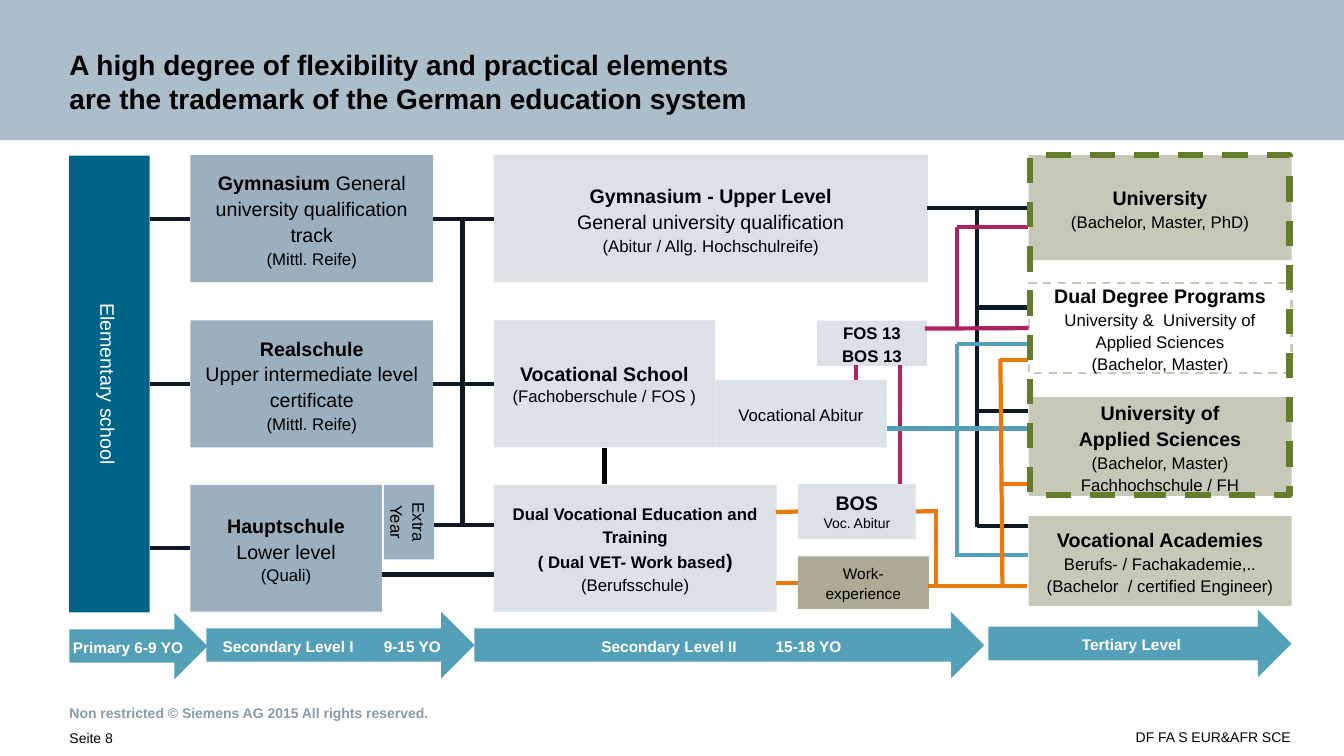
from dataclasses import dataclass
from typing import NamedTuple

import pptx
import pptx.dml.color
import pptx.enum.dml
import pptx.enum.shapes
import pptx.enum.text
import pptx.oxml
import pptx.oxml.ns
import pptx.util
from pptx.util import Inches

SHAPE = pptx.enum.shapes.MSO_SHAPE
ALIGN = pptx.enum.text.PP_ALIGN
ANCHOR = pptx.enum.text.MSO_ANCHOR
DASH = pptx.enum.dml.MSO_LINE.DASH

NAVY, TEAL, SKY = "0F1923", "006487", "55A0B9"
STEEL, PALE, SAND, OLIVE = "9BAFBE", "DCE1E6", "C8C8B9", "AAAA96"
BERRY, ORANGE, GREEN = "AF235F", "EB780A", "647D2D"
BLACK, WHITE = "000000", "FFFFFF"
LEFT, BOTTOM, RIGHT = 1, 2, 3


class Run(NamedTuple):
    text: str
    size: float = 12
    bold: bool = False


Paragraphs = list[list[Run]]


@dataclass
class Box:
    at: tuple[float, float, float, float]
    paragraphs: Paragraphs
    fill: str | None = None
    color: str = BLACK
    rotation: float = 0
    spacing: float = 1.1
    outline: tuple[str, float] | None = None
    preset: SHAPE = SHAPE.RECTANGLE
    align: ALIGN = ALIGN.CENTER
    insets: tuple[float, float, float, float] = (0.12, 0.06, 0.12, 0.06)
    tab: float = 0


class Link(NamedTuple):
    start: tuple[float, float]
    end: tuple[float, float]
    color: str = NAVY
    begin_at: tuple[str, int] | None = None
    end_at: tuple[str, int] | None = None


def rgb(value: str) -> pptx.dml.color.RGBColor:
    return pptx.dml.color.RGBColor.from_string(value)


def write(frame, paragraphs: Paragraphs, color: str, align: ALIGN, anchor: ANCHOR,
          insets: tuple[float, float, float, float], spacing: float = 1, tab: float = 0) -> None:
    """Fill a text frame; a newline in a run becomes a line break."""
    frame.word_wrap = True
    frame.vertical_anchor = anchor
    frame.margin_left, frame.margin_top, frame.margin_right, frame.margin_bottom = map(Inches, insets)
    for index, runs in enumerate(paragraphs):
        paragraph = frame.add_paragraph() if index else frame.paragraphs[0]
        paragraph.alignment = align
        paragraph.line_spacing = spacing
        if tab:
            tabs = pptx.oxml.parse_xml(
                f'<a:tabLst {pptx.oxml.ns.nsdecls("a")}><a:tab pos="{Inches(tab)}" algn="l"/></a:tabLst>')
            paragraph._p.get_or_add_pPr().append(tabs)
        for text, size, bold in runs:
            for number, line in enumerate(text.split("\n")):
                if number:
                    paragraph.add_line_break()
                run = paragraph.add_run()
                run.text = line
                run.font.name = "Arial"
                run.font.size = pptx.util.Pt(size)
                run.font.bold = bold
                run.font.color.rgb = rgb(color)


def draw_box(slide, box: Box):
    shape = slide.shapes.add_shape(box.preset, *map(Inches, box.at))
    shape.shadow.inherit = False
    shape.rotation = box.rotation
    if box.fill:
        shape.fill.solid()
        shape.fill.fore_color.rgb = rgb(box.fill)
    else:
        shape.fill.background()
    if box.outline:
        color, width = box.outline
        shape.line.color.rgb = rgb(color)
        shape.line.width = pptx.util.Pt(width)
        shape.line.dash_style = DASH
    else:
        shape.line.fill.background()
    write(shape.text_frame, box.paragraphs, box.color, box.align, ANCHOR.MIDDLE,
          box.insets, box.spacing, box.tab)
    return shape


def draw_link(slide, link: Link, shapes: dict) -> None:
    line = slide.shapes.add_connector(pptx.enum.shapes.MSO_CONNECTOR.STRAIGHT,
                                      *map(Inches, link.start + link.end))
    if link.begin_at:
        line.begin_connect(shapes[link.begin_at[0]], link.begin_at[1])
    if link.end_at:
        line.end_connect(shapes[link.end_at[0]], link.end_at[1])
    line.line.color.rgb = rgb(link.color)
    line.line.width = pptx.util.Pt(3)
    line._element.spPr.append(pptx.oxml.parse_xml(f'<a:effectLst {pptx.oxml.ns.nsdecls("a")}/>'))


def draw_label(slide, at: tuple[float, float, float, float], run: Run, insets, color: str = BLACK,
               align: ALIGN = ALIGN.LEFT, anchor: ANCHOR = ANCHOR.TOP, spacing: float = 1) -> None:
    label = slide.shapes.add_textbox(*map(Inches, at))
    write(label.text_frame, [[run]], color, align, anchor, insets, spacing)


def school(at, name: str, *details: Run, fill: str = PALE, **options) -> Box:
    """A box with a bold 14 pt name and one paragraph for each detail."""
    return Box(at, [[Run(name, 14, True)]] + [[detail] for detail in details], fill, **options)


def level(at, text: str, **options) -> Box:
    return Box(at, [[Run(text, 11, True)]], SKY, WHITE, preset=SHAPE.RIGHT_ARROW, **options)


BOXES = {
    "elementary": Box((-1.18, 3.41, 4.53, 0.8), [[Run("Elementary school", 14)]], TEAL, WHITE, 90),
    "gymnasium": Box((1.89, 1.54, 2.41, 1.26), [
        [Run("Gymnasium ", 14, True), Run("General university qualification track", 14)],
        [Run("(Mittl. Reife)")]], STEEL),
    "realschule": school((1.89, 3.18, 2.41, 1.26), "Realschule",
                         Run("Upper intermediate level certificate", 14), Run("(Mittl. Reife)"), fill=STEEL),
    "hauptschule": school((1.89, 4.81, 1.9, 1.26), "Hauptschule",
                          Run("Lower level", 14), Run("(Quali)"), fill=STEEL),
    "extra year": Box((3.69, 4.93, 0.74, 0.5), [[Run("Extra Year")]], STEEL, rotation=90),
    "upper level": school((4.9, 1.54, 4.31, 1.26), "Gymnasium - Upper Level",
                          Run("General university qualification", 14),
                          Run("(Abitur / Allg. Hochschulreife)")),
    "vocational school": school((4.9, 3.18, 2.2, 1.26), "Vocational School",
                                Run("(Fachoberschule / FOS )"), spacing=1),
    "vocational abitur": Box((7.1, 3.77, 1.7, 0.67), [[Run("Vocational Abitur")]], PALE),
    "dual training": Box((4.9, 4.81, 2.81, 1.26), [
        [Run("Dual Vocational Education and Training", 12, True)],
        [Run("( Dual VET- Work based", 12, True), Run(")", 14, True)],
        [Run("(Berufsschule)")]], PALE),
    "fos bos 13": Box((8.11, 3.18, 1.09, 0.45), [[Run("FOS 13 BOS 13", 12, True)]], PALE),
    "bos": school((7.92, 4.8, 1.17, 0.55), "BOS", Run("Voc. Abitur", 10), spacing=1),
    "work": Box((7.92, 5.52, 1.3, 0.52), [[Run("Work- experience", 11)]], OLIVE),
    "university": school((10.21, 1.54, 2.61, 1.04), "University",
                         Run("(Bachelor, Master, PhD)"), fill=SAND),
    "dual degree": school((10.21, 2.81, 2.61, 0.89), "Dual Degree Programs",
                          Run("University &  University of Applied Sciences\n(Bachelor, Master)"),
                          fill=None, outline=(SAND, 1.5)),
    "applied sciences": school((10.21, 3.94, 2.61, 0.98), "University of",
                               Run("Applied Sciences", 14, True),
                               Run("(Bachelor, Master) Fachhochschule / FH"), fill=SAND),
    "academies": school((10.21, 5.12, 2.61, 0.89), "Vocational Academies",
                        Run("Berufs- / Fachakademie,..\n(Bachelor  / certified Engineer)"), fill=SAND),
    "primary": level((0.69, 6.08, 1.37, 0.66), "Primary 6-9 YO ", insets=(0, 0.06, 0, 0.06)),
    "secondary 1": level((2.05, 6.07, 2.66, 0.66), "Secondary Level I\t9-15 YO",
                         align=ALIGN.LEFT, insets=(0.16, 0.06, 0, 0.06), tab=1.6),
    "secondary 2": level((4.71, 6.07, 5.06, 0.66), "Secondary Level II\t15-18 YO",
                         align=ALIGN.LEFT, insets=(1.26, 0.06, 0, 0.06), tab=1.73),
    "tertiary": level((9.81, 6.05, 3.01, 0.67), "Tertiary Level"),
}

LINKS = [
    *(Link((1.49, y), (1.89, y), end_at=(name, LEFT))
      for name, y in (("gymnasium", 2.17), ("realschule", 3.81), ("hauptschule", 5.44))),
    Link((4.3, 2.17), (4.9, 2.17), NAVY, ("gymnasium", RIGHT), ("upper level", LEFT)),
    Link((4.3, 3.81), (4.9, 3.81), NAVY, ("realschule", RIGHT), ("vocational school", LEFT)),
    Link((4.59, 2.18), (4.59, 5.22)),
    Link((4.31, 5.21), (4.9, 5.21)),
    Link((3.79, 5.7), (4.9, 5.7)),
    Link((6, 4.44), (6, 4.8), BLACK, ("vocational school", BOTTOM)),
    Link((8.5, 3.77), (8.5, 3.62), BERRY),
    Link((8.93, 4.8), (8.93, 3.62), BERRY),
    Link((9.2, 2.06), (10.21, 2.06), end_at=("university", LEFT)),
    Link((9.7, 2.07), (9.7, 5.23)),
    *(Link((9.7, y), (10.2, y)) for y in (3.05, 4.08, 5.22)),
    Link((8.8, 4.25), (10.21, 4.25), SKY),
    Link((9.5, 3.41), (9.5, 5.53), SKY),
    *(Link((9.5, y), (10.2, y), SKY) for y in (3.41, 5.51)),
    Link((9.5, 3.26), (9.5, 2.25), BERRY),
    Link((9.5, 2.25), (10.2, 2.25), BERRY),
    Link((9.18, 3.26), (10.21, 3.26), BERRY, end_at=("dual degree", LEFT)),
    Link((7.92, 5.08), (7.7, 5.08), ORANGE, ("bos", LEFT)),
    Link((7.92, 5.78), (7.7, 5.78), ORANGE, ("work", LEFT)),
    Link((9.09, 5.07), (9.29, 5.07), ORANGE, ("bos", RIGHT)),
    Link((9.29, 5.05), (9.29, 5.82), ORANGE),
    Link((9.21, 5.81), (10.19, 5.81), ORANGE),
    Link((9.93, 3.56), (9.95, 5.83), ORANGE),
    Link((9.93, 3.57), (10.2, 3.57), ORANGE),
    Link((9.95, 4.8), (10.21, 4.8), ORANGE),
]


def main() -> None:
    deck = pptx.Presentation()
    deck.slide_width, deck.slide_height = Inches(13.34), Inches(7.5)
    slide = deck.slides.add_slide(deck.slide_layouts[6])
    title = "A high degree of flexibility and practical elements\nare the trademark of the German education system"
    header = (0, 0, 13.34, 1.39)
    draw_box(slide, Box(header, [], "ADBECB"))
    draw_label(slide, header, Run(title, 20, True), (0.69, 0.43, 2.32, 0.26), anchor=ANCHOR.BOTTOM)
    draw_label(slide, (0, 6.84, 13.34, 0.47), Run("Non restricted © Siemens AG 2015 All rights reserved.", 10, True),
               (0.69, 0, 3.51, 0), "879BAA", anchor=ANCHOR.MIDDLE)
    draw_label(slide, (0, 7.22, 1.93, 0.28), Run("Seite 8", 10), (0.69, 0, 0, 0.13), spacing=1.1)
    draw_label(slide, (4.14, 7.21, 9.2, 0.28), Run("DF FA S EUR&AFR SCE", 10), (0, 0, 0.53, 0.13),
               align=ALIGN.RIGHT, spacing=1.1)
    shapes = {name: draw_box(slide, box) for name, box in BOXES.items()}
    for link in LINKS:
        draw_link(slide, link, shapes)
    draw_box(slide, Box((10.22, 1.54, 2.58, 3.37), [], outline=(GREEN, 4.5)))
    deck.save("out.pptx")


if __name__ == "__main__":
    main()
